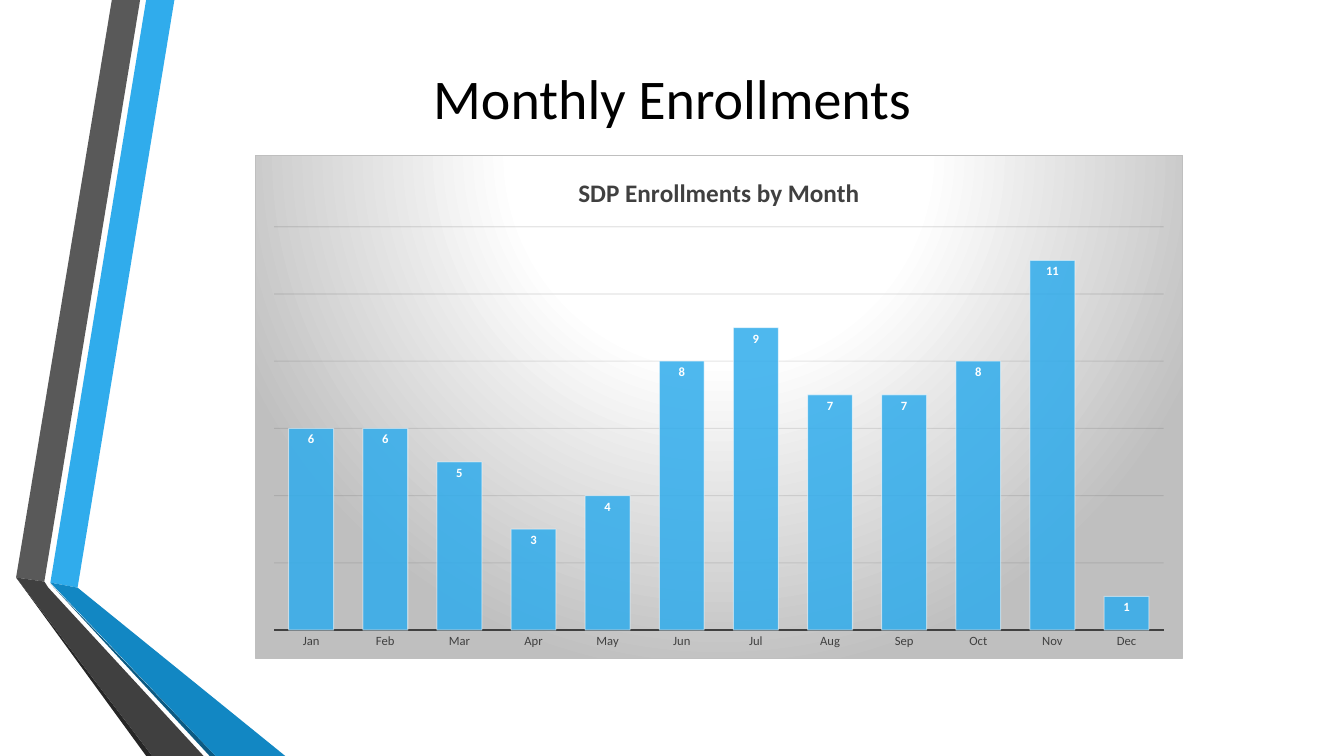
from lxml import etree
from pptx import Presentation
from pptx import util as u
from pptx.chart.data import CategoryChartData
from pptx.dml.color import RGBColor
from pptx.enum import chart as ch, text
from pptx.oxml import parse_xml
from pptx.oxml.ns import nsdecls, qn

BLUE, WHITE, BLACK = "30ACEC", "FFFFFF", "000000"
DARK, SILVER = "404040", "BFBFBF"

RIBBONS = [
    (BLUE, [(0.5, 5.78), (0.77, 5.83), (1.73, 0), (1.45, 0)]),
    ("595959", [(1.39, 0), (1.11, 0), (0.16, 5.73), (0.44, 5.77)]),
    ("262626", [(0.16, 5.73), (1.45, 7.5), (1.51, 7.5)]),
    ("0C5A82", [(0.5, 5.79), (2.08, 7.5), (2.14, 7.5)]),
    ("1287C3", [(0.5, 5.78), (2.14, 7.5), (2.83, 7.5), (0.77, 5.83)]),
    (DARK, [(2.02, 7.5), (0.48, 5.83), (0.44, 5.77), (0.16, 5.73), (1.51, 7.5)]),
]
ENROLLMENTS = {"Jan": 6, "Feb": 6, "Mar": 5, "Apr": 3, "May": 4, "Jun": 8,
               "Jul": 9, "Aug": 7, "Sep": 7, "Oct": 8, "Nov": 11, "Dec": 1}


def rgb(color):
    return RGBColor.from_string(color)


def set_alpha(fmt, percent):
    """Make the solid colour of a fill or line format partly transparent."""
    color = fmt._xPr.find(".//" + qn("a:srgbClr"))
    etree.SubElement(color, qn("a:alpha"), val=str(percent * 1000))


def chart_background():
    """Return a radial gradient, centred above the chart, with a thin border."""
    stops = "".join(
        f'<a:gs pos="{pos * 1000}"><a:srgbClr val="{color}"/></a:gs>'
        for pos, color in [(0, WHITE), (39, WHITE), (100, SILVER)])
    return parse_xml(
        f'<c:spPr {nsdecls("c", "a")}><a:gradFill><a:gsLst>{stops}</a:gsLst>'
        '<a:path path="circle">'
        '<a:fillToRect l="50000" t="-80000" r="50000" b="180000"/></a:path>'
        f'</a:gradFill><a:ln w="{u.Pt(0.75)}"><a:solidFill>'
        f'<a:srgbClr val="{SILVER}"/></a:solidFill></a:ln></c:spPr>')


class Deck:
    """Holds the font and the current slide."""

    def __init__(self, prs, font="Calibri"):
        self.font = font
        self.s = prs.slides.add_slide(prs.slide_layouts[6])

    def style(self, font, size, color, bold=False):
        values = {"name": self.font, "size": u.Pt(size), "bold": bold}
        for name, value in values.items():
            setattr(font, name, value)
        font.color.rgb = rgb(color)

    def line(self, line, color, width, alpha=None):
        line.color.rgb = rgb(color)
        line.width = u.Pt(width)
        if alpha is not None:
            set_alpha(line.fill, alpha)

    def polygon(self, color, points):
        start, *rest = [(u.Inches(x), u.Inches(y)) for x, y in points]
        builder = self.s.shapes.build_freeform(*start)
        builder.add_line_segments(rest, close=True)
        sp = builder.convert_to_shape()
        sp.shadow.inherit = False
        sp.fill.solid()
        sp.fill.fore_color.rgb = rgb(color)
        sp.line.fill.background()

    def title(self, words, box):
        tf = self.s.shapes.add_textbox(*map(u.Inches, box)).text_frame
        tf.word_wrap = True
        tf.vertical_anchor = text.MSO_ANCHOR.MIDDLE
        p = tf.paragraphs[0]
        p.alignment = text.PP_ALIGN.CENTER
        r = p.add_run()
        r.text = words
        self.style(r.font, 40, BLACK)

    def column_chart(self, heading, values, box):
        data = CategoryChartData()
        data.categories = list(values)
        data.add_series("Series 1", list(values.values()))
        chart = self.s.shapes.add_chart(
            ch.XL_CHART_TYPE.COLUMN_CLUSTERED, *map(u.Inches, box), data).chart
        self.style(chart.font, 10, BLACK)
        chart.has_legend = False
        chart._chartSpace.chart.addnext(chart_background())

        chart.has_title = True
        chart.chart_title.include_in_layout = False
        r = chart.chart_title.text_frame.paragraphs[0].add_run()
        r.text = heading
        self.style(r.font, 18, DARK, bold=True)

        months, counts = chart.category_axis, chart.value_axis
        months.major_tick_mark = ch.XL_TICK_MARK.NONE
        self.style(months.tick_labels.font, 9, DARK)
        self.line(months.format.line, DARK, 1.5)
        scale = {"visible": False, "minimum_scale": 0, "maximum_scale": 12,
                 "major_unit": 2, "has_major_gridlines": True}
        for name, value in scale.items():
            setattr(counts, name, value)
        self.line(counts.major_gridlines.format.line, "0D0D0D", 0.75, alpha=10)

        plot = chart.plots[0]
        plot.gap_width = 65
        plot.vary_by_categories = False
        bars = plot.series[0]
        bars.format.fill.solid()
        bars.format.fill.fore_color.rgb = rgb(BLUE)
        set_alpha(bars.format.fill, 85)
        self.line(bars.format.line, WHITE, 0.75, alpha=50)
        labels = bars.data_labels
        labels.show_value = True
        labels.position = ch.XL_LABEL_POSITION.INSIDE_END
        self.style(labels.font, 9, WHITE, bold=True)


def main():
    prs = Presentation()
    prs.slide_width, prs.slide_height = u.Inches(13.33), u.Inches(7.5)
    deck = Deck(prs)
    for color, points in RIBBONS:
        deck.polygon(color, points)
    deck.title("Monthly Enrollments", (0.92, 0.37, 11.49, 1.18))
    deck.column_chart("SDP Enrollments by Month", ENROLLMENTS, (2.53, 1.54, 9.2, 5))
    prs.save("out.pptx")


if __name__ == "__main__":
    main()
